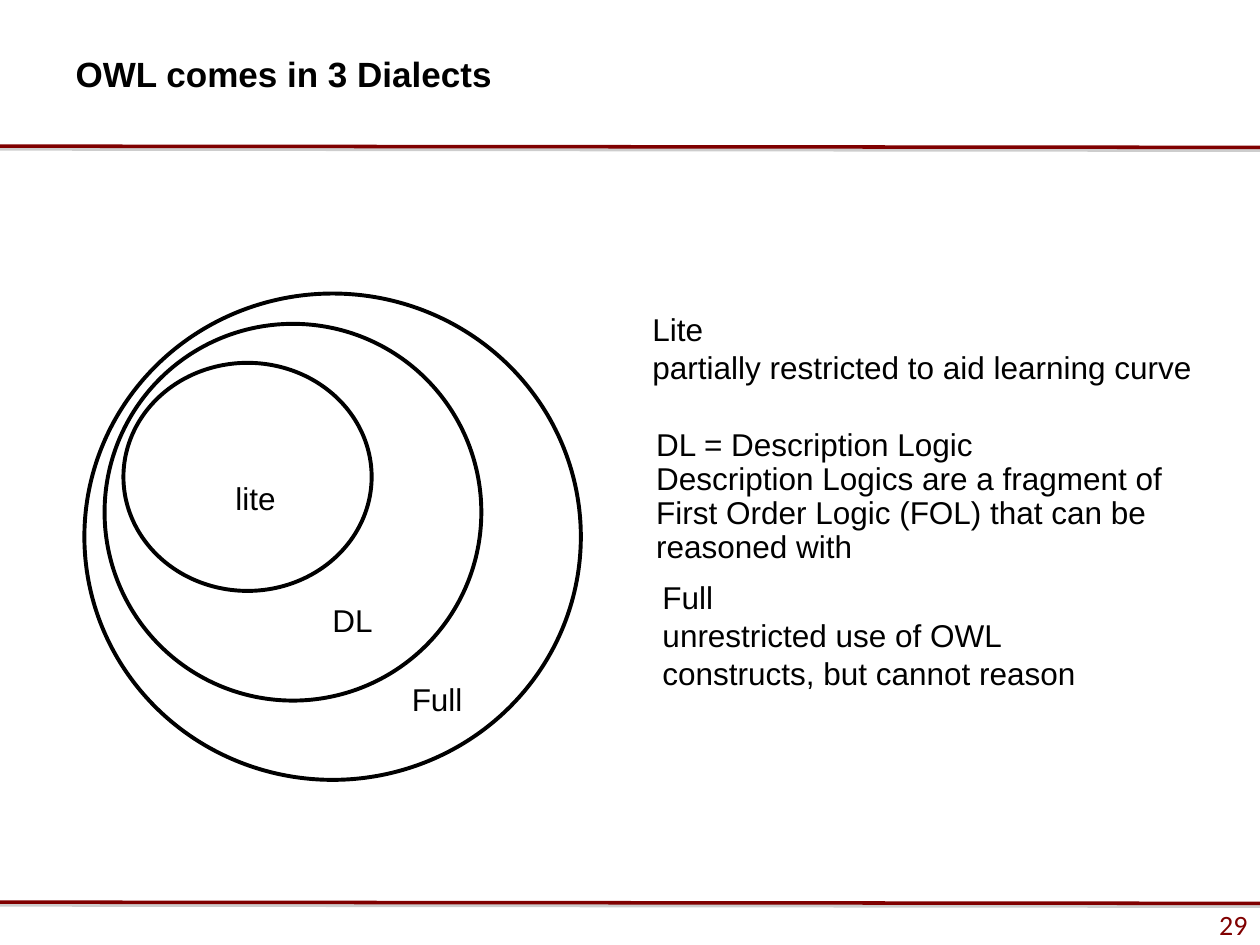
"""Build the slide that shows the three OWL dialects as nested ellipses."""
from dataclasses import dataclass

import lxml.etree
import pptx
import pptx.dml.color
import pptx.enum.shapes
import pptx.enum.text
import pptx.oxml
import pptx.oxml.ns
import pptx.util


@dataclass(frozen=True)
class Theme:
    ink: str = "000000"
    paper: str = "FFFFFF"
    accent: str = "800000"
    shade: str = "808080"
    font: str = "Arial"
    number_font: str = "Calibri"
    title_size: int = 20
    body_size: int = 18
    number_size: int = 16
    outline: float = 2.25
    rule: float = 2


class Deck:
    COLS, ROWS = 100, 75

    def __init__(self, theme):
        self.theme = theme
        self.prs = pptx.Presentation()
        self.prs.slide_width = pptx.util.Inches(10)
        self.prs.slide_height = pptx.util.Inches(7.5)
        self.s = self.prs.slides.add_slide(self.prs.slide_layouts[5])

    def x(self, cols):
        return round(self.prs.slide_width * cols / self.COLS)

    def y(self, rows):
        return round(self.prs.slide_height * rows / self.ROWS)

    def box(self, at):
        left, top, width, height = at
        return self.x(left), self.y(top), self.x(width), self.y(height)

    def color(self, value):
        return pptx.dml.color.RGBColor.from_string(value)

    def run(self, p, text, size=None, color=None, font=None, bold=False):
        r = p.add_run()
        r.text = text
        r.font.name = font or self.theme.font
        r.font.size = pptx.util.Pt(size or self.theme.body_size)
        r.font.bold = bold
        r.font.color.rgb = self.color(color or self.theme.ink)

    def title(self, at, text):
        sp = self.s.shapes.title
        sp.left, sp.top, sp.width, sp.height = self.box(at)
        tf = sp.text_frame
        tf.word_wrap = True
        tf.vertical_anchor = pptx.enum.text.MSO_ANCHOR.MIDDLE
        p = tf.paragraphs[0]
        p.alignment = pptx.enum.text.PP_ALIGN.LEFT
        self.run(p, text, self.theme.title_size, bold=True)

    def text(self, at, paragraphs, wrap=False, indent=0, spacing=None):
        tf = self.s.shapes.add_textbox(*self.box(at)).text_frame
        tf.word_wrap = wrap
        tf.auto_size = pptx.enum.text.MSO_AUTO_SIZE.SHAPE_TO_FIT_TEXT
        for i, lines in enumerate(paragraphs):
            p = tf.add_paragraph() if i else tf.paragraphs[0]
            if indent:
                p.level = 1
                pPr = p._p.get_or_add_pPr()
                pPr.set("marL", str(self.x(indent)))
                pPr.set("indent", "0")
            if spacing:
                p.line_spacing = spacing
            for j, line in enumerate(lines.split("\n")):
                if j:
                    p.add_line_break()
                self.run(p, line)

    def ellipse(self, at):
        sp = self.s.shapes.add_shape(pptx.enum.shapes.MSO_SHAPE.OVAL, *self.box(at))
        sp.shadow.inherit = False
        sp.fill.background()
        sp.line.color.rgb = self.color(self.theme.ink)
        sp.line.width = pptx.util.Pt(self.theme.outline)

    def page_number(self, at, number):
        sp = self.s.shapes.add_shape(pptx.enum.shapes.MSO_SHAPE.RECTANGLE, *self.box(at))
        sp.shadow.inherit = False
        sp.fill.solid()
        sp.fill.fore_color.rgb = self.color(self.theme.paper)
        sp.line.fill.background()
        tf = sp.text_frame
        tf.word_wrap = False
        tf.vertical_anchor = pptx.enum.text.MSO_ANCHOR.MIDDLE
        p = tf.paragraphs[0]
        p.alignment = pptx.enum.text.PP_ALIGN.RIGHT
        self.run(p, number, self.theme.number_size, self.theme.accent, self.theme.number_font)

    def rule(self, row):
        line = self.s.shapes.add_connector(
            pptx.enum.shapes.MSO_CONNECTOR.STRAIGHT,
            0, self.y(row), self.x(self.COLS), self.y(row + 0.1))
        line.line.color.rgb = self.color(self.theme.accent)
        line.line.width = pptx.util.Pt(self.theme.rule)
        qn = pptx.oxml.ns.qn
        effects = lxml.etree.SubElement(line._element.spPr, qn("a:effectLst"))
        shadow = lxml.etree.SubElement(
            effects, qn("a:outerShdw"), blurRad="0",
            dist=str(pptx.util.Pt(1.6)), dir="5400000", rotWithShape="0")
        shade = lxml.etree.SubElement(shadow, qn("a:srgbClr"), val=self.theme.shade)
        lxml.etree.SubElement(shade, qn("a:alpha"), val="38000")


def main():
    deck = Deck(Theme())
    deck.page_number((0, 72.1, 100, 2.5), "29")
    for row in (11.6, 71.6):
        deck.rule(row)
    dialects = [
        ((9.8, 28.8, 19.7, 18.1), "lite", (17.7, 37.5, 5.2, 4),
         (50.8, 24.1, 44.8, 7),
         ["Lite", "partially restricted to aid learning curve"], {}),
        ((8.3, 25.7, 29.9, 29.9), "DL", (25.4, 47.2, 5.2, 4),
         (46.1, 33.6, 49.6, 11.8),
         ["DL = Description Logic\nDescription Logics are a fragment of "
          "First Order Logic (FOL) that can be reasoned with"],
         {"wrap": True, "indent": 5, "spacing": 0.9}),
        ((6.7, 23.3, 39.4, 38.6), "Full", (31.7, 53.5, 6, 4),
         (51.6, 45.4, 40.4, 10),
         ["Full", "unrestricted use of OWL constructs, but cannot reason"],
         {"wrap": True}),
    ]
    for ring, label, label_at, note_at, note, style in dialects:
        deck.ellipse(ring)
        deck.text(label_at, [label])
        deck.text(note_at, note, **style)
    deck.title((5, 3.3, 63.3, 5), "OWL comes in 3 Dialects")
    deck.prs.save("out.pptx")


if __name__ == "__main__":
    main()
